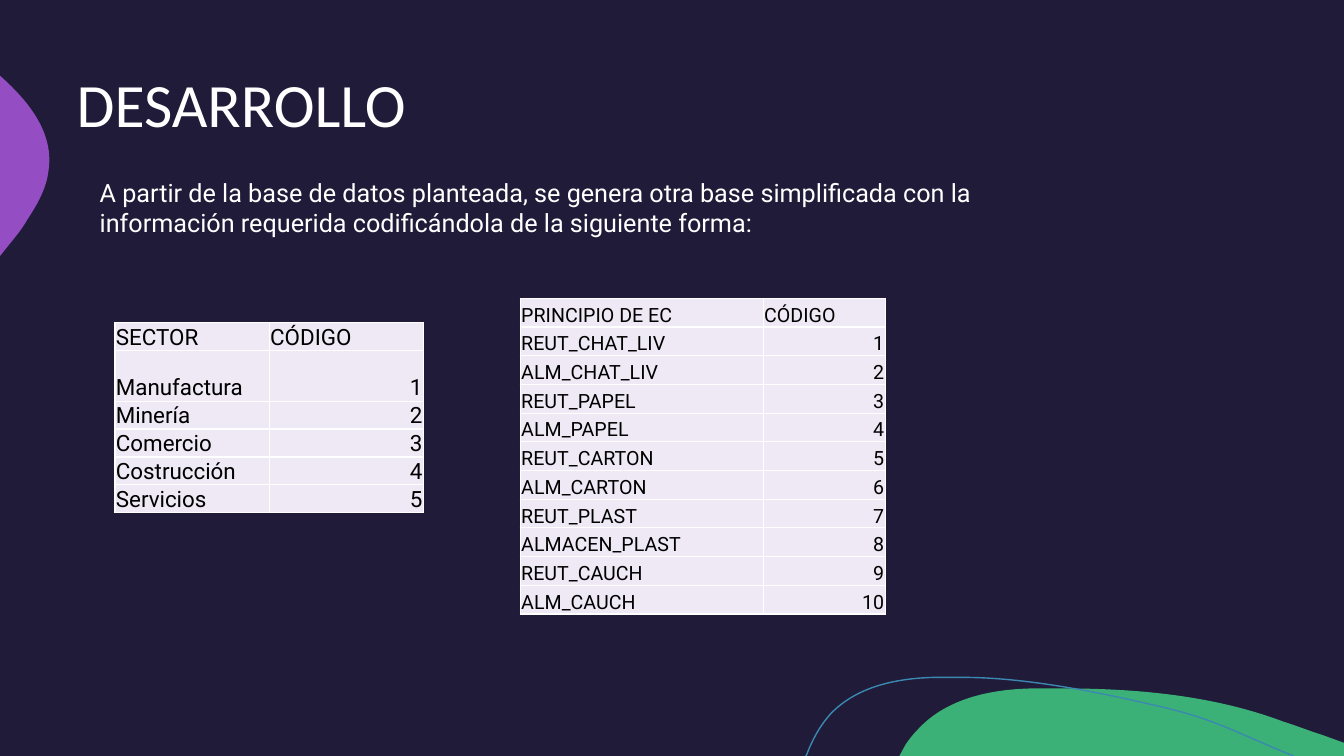
from dataclasses import dataclass

import pptx
import pptx.dml.color
import pptx.enum.text
import pptx.oxml
import pptx.oxml.ns
import pptx.util
from pptx.slide import Slide
from pptx.util import Inches

Point = tuple[float, float]
Segment = tuple[Point, ...]  # one point: straight line; three points: cubic curve


@dataclass(frozen=True)
class Theme:
    background: str = "201B38"
    text: str = "FFFFFF"
    cell_text: str = "000000"
    cell_fill: str = "EEE9F5"
    border: str = "FFFFFF"
    green: str = "3BB178"
    purple: str = "944DC3"
    blue: str = "3B88B1"
    title_font: str = "Calibri"
    body_font: str = "Roboto"
    title_size: int = 44
    body_size: int = 18


@dataclass(frozen=True)
class Outline:
    start: Point
    segments: list[Segment]
    color: str
    filled: bool = True


@dataclass(frozen=True)
class CodeTable:
    left: float
    top: float
    column_widths: list[float]
    row_heights: list[float]
    heading: str
    names: list[str]
    size: int


THEME = Theme()
UNITS_PER_INCH = 100

OUTLINES = [
    Outline((10.54, 6.83), [
        ((11.28, 6.83), (12.04, 6.9), (12.73, 7.16)),
        ((12.86, 7.2), (12.98, 7.25), (13.11, 7.29)),
        ((13.33, 7.37),), ((13.33, 7.5),), ((8.92, 7.5),), ((8.98, 7.39),),
        ((9.02, 7.33), (9.06, 7.28), (9.11, 7.23)),
        ((9.39, 6.93), (9.82, 6.84), (10.23, 6.83)),
        ((10.33, 6.83), (10.43, 6.83), (10.54, 6.83)),
    ], THEME.green),
    Outline((0, 0.75), [
        ((0.01, 0.76),),
        ((0.3, 1.02), (0.54, 1.33), (0.48, 1.7)),
        ((0.46, 1.87), (0.37, 2.03), (0.27, 2.18)),
        ((0.24, 2.24), (0.17, 2.33), (0.08, 2.44)),
        ((0, 2.54),),
    ], THEME.purple),
    Outline((7.99, 7.5), [
        ((8, 7.49),),
        ((8.06, 7.33), (8.14, 7.19), (8.24, 7.08)),
        ((8.5, 6.81), (8.89, 6.73), (9.26, 6.72)),
        ((9.55, 6.72),),
        ((10.22, 6.72), (11, 6.89), (11.55, 7.02)),
        ((12.09, 7.15), (12.26, 7.27), (12.83, 7.5)),
    ], THEME.blue, filled=False),
]

CODE_TABLES = [
    CodeTable(1.14, 3.2, [1.53, 1.53], [0.28, 0.5] + [0.275] * 4, "SECTOR",
              ["Manufactura", "Minería", "Comercio", "Costrucción", "Servicios"], 16),
    CodeTable(5.16, 2.96, [2.41, 1.21], [0.285] * 11, "PRINCIPIO DE EC",
              ["REUT_CHAT_LIV", "ALM_CHAT_LIV", "REUT_PAPEL", "ALM_PAPEL",
               "REUT_CARTON", "ALM_CARTON", "REUT_PLAST", "ALMACEN_PLAST",
               "REUT_CAUCH", "ALM_CAUCH"], 14),
]


def rgb(color: str) -> pptx.dml.color.RGBColor:
    return pptx.dml.color.RGBColor.from_string(color)


def set_text(text_frame, text: str, font_name: str, size: int, color: str) -> None:
    text_frame.text = text
    font = text_frame.paragraphs[0].runs[0].font
    font.name = font_name
    font.size = pptx.util.Pt(size)
    font.color.rgb = rgb(color)


def to_units(point: Point) -> tuple[int, int]:
    return round(point[0] * UNITS_PER_INCH), round(point[1] * UNITS_PER_INCH)


def draw_outline(slide: Slide, outline: Outline) -> None:
    anchors = [to_units(outline.start)]
    anchors += [to_units(segment[-1]) for segment in outline.segments]
    builder = slide.shapes.build_freeform(*anchors[0], scale=Inches(1) / UNITS_PER_INCH)
    builder.add_line_segments(anchors[1:], close=outline.filled)
    shape = builder.convert_to_shape()

    # Bend the straight segments that have control points
    left, top = min(x for x, _ in anchors), min(y for _, y in anchors)
    lines = list(shape._element.iter(pptx.oxml.ns.qn("a:lnTo")))
    for line, segment in zip(lines, outline.segments):
        if len(segment) == 3:
            points = "".join(f'<a:pt x="{x - left}" y="{y - top}"/>'
                             for x, y in map(to_units, segment))
            line.getparent().replace(line, pptx.oxml.parse_xml(
                f'<a:cubicBezTo {pptx.oxml.ns.nsdecls("a")}>{points}</a:cubicBezTo>'))

    shape.shadow.inherit = False
    if outline.filled:
        shape.fill.solid()
        shape.fill.fore_color.rgb = rgb(outline.color)
        shape.line.fill.background()
    else:
        shape.fill.background()
        shape.line.color.rgb = rgb(outline.color)
        shape.line.width = pptx.util.Pt(1)


def format_cell(cell, text: str, size: int) -> None:
    cell.margin_left = cell.margin_right = cell.margin_top = Inches(0.01)
    cell.margin_bottom = 0
    cell.vertical_anchor = pptx.enum.text.MSO_ANCHOR.BOTTOM
    set_text(cell.text_frame, text, THEME.body_font, size, THEME.cell_text)
    if text.isdigit():
        cell.text_frame.paragraphs[0].alignment = pptx.enum.text.PP_ALIGN.RIGHT
    # Borders come before the fill in the cell properties
    properties = cell._tc.get_or_add_tcPr()
    for side in ("lnL", "lnR", "lnT", "lnB"):
        properties.append(pptx.oxml.parse_xml(
            f'<a:{side} {pptx.oxml.ns.nsdecls("a")} w="12700"><a:solidFill>'
            f'<a:srgbClr val="{THEME.border}"/></a:solidFill></a:{side}>'))
    cell.fill.solid()
    cell.fill.fore_color.rgb = rgb(THEME.cell_fill)


def draw_table(slide: Slide, code_table: CodeTable) -> None:
    rows = [(code_table.heading, "CÓDIGO")]
    rows += [(name, str(code)) for code, name in enumerate(code_table.names, 1)]
    table = slide.shapes.add_table(
        len(rows), 2, Inches(code_table.left), Inches(code_table.top),
        Inches(sum(code_table.column_widths)), Inches(sum(code_table.row_heights))).table
    for column, width in zip(table.columns, code_table.column_widths):
        column.width = Inches(width)
    for row, height, texts in zip(table.rows, code_table.row_heights, rows):
        row.height = Inches(height)
        for cell, text in zip(row.cells, texts):
            format_cell(cell, text, code_table.size)


def main() -> None:
    presentation = pptx.Presentation()
    presentation.slide_width = Inches(13.33)
    presentation.slide_height = Inches(7.5)
    slide = presentation.slides.add_slide(presentation.slide_layouts.get_by_name("Title Only"))
    slide.background.fill.solid()
    slide.background.fill.fore_color.rgb = rgb(THEME.background)

    # Decoration
    for outline in OUTLINES:
        draw_outline(slide, outline)

    # Title
    title = slide.shapes.title
    title.left, title.top = Inches(0.66), Inches(0.23)
    title.width, title.height = Inches(11.67), Inches(1.67)
    set_text(title.text_frame, "DESARROLLO", THEME.title_font, THEME.title_size, THEME.text)
    title.text_frame.vertical_anchor = pptx.enum.text.MSO_ANCHOR.MIDDLE
    title.text_frame.paragraphs[0].alignment = pptx.enum.text.PP_ALIGN.LEFT
    title.text_frame.paragraphs[0].line_spacing = 0.9

    # Introduction
    introduction = slide.shapes.add_textbox(
        Inches(0.89), Inches(1.71), Inches(9.26), Inches(0.71))
    introduction.text_frame.word_wrap = True
    set_text(introduction.text_frame,
             "A partir de la base de datos planteada, se genera otra base simplificada con la "
             "información requerida codificándola de la siguiente forma:",
             THEME.body_font, THEME.body_size, THEME.text)

    # Code tables
    for code_table in CODE_TABLES:
        draw_table(slide, code_table)

    presentation.save("out.pptx")


if __name__ == "__main__":
    main()
